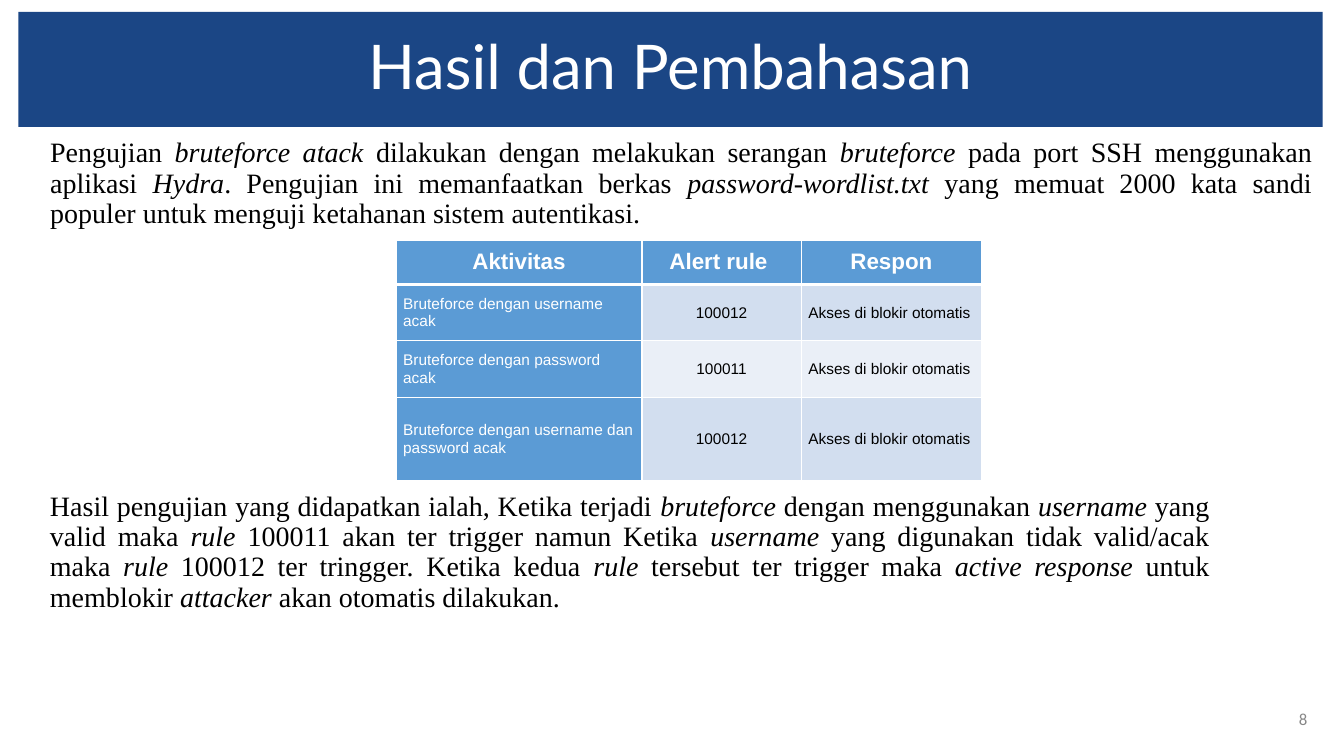
import pptx
import pptx.dml.color
import pptx.enum.text
import pptx.oxml.ns
import pptx.util
from lxml import etree

Cm = pptx.util.Cm
Pt = pptx.util.Pt
RGBColor = pptx.dml.color.RGBColor
ALIGN = pptx.enum.text.PP_ALIGN
MIDDLE = pptx.enum.text.MSO_ANCHOR.MIDDLE
SIZING = pptx.enum.text.MSO_AUTO_SIZE

NAVY = RGBColor(0x1B, 0x46, 0x85)
BLUE = RGBColor(0x5B, 0x9B, 0xD5)
PALE = RGBColor(0xD2, 0xDE, 0xEF)
LIGHT = RGBColor(0xEA, 0xEF, 0xF7)
WHITE = RGBColor(0xFF, 0xFF, 0xFF)
BLACK = RGBColor(0, 0, 0)
GREY = RGBColor(0x88, 0x88, 0x88)

INTRO = (
    "Pengujian *bruteforce atack *dilakukan dengan melakukan serangan "
    "*bruteforce* pada port SSH menggunakan aplikasi *Hydra*. Pengujian ini "
    "memanfaatkan berkas *password-wordlist.txt *yang memuat 2000 kata sandi "
    "populer untuk menguji ketahanan sistem autentikasi."
)
RESULT = (
    "Hasil pengujian yang didapatkan ialah, Ketika terjadi *bruteforce *dengan "
    "menggunakan *username* yang valid maka *rule* 100011 akan ter trigger namun "
    "Ketika *username* yang digunakan tidak valid/acak maka *rule* 100012 ter "
    "tringger. Ketika kedua *rule *tersebut ter trigger maka *active response "
    "*untuk memblokir *attacker *akan otomatis dilakukan."
)
ROWS = [
    ("Aktivitas", "Alert rule ", "Respon"),
    ("Bruteforce dengan username acak", "100012", "Akses di blokir otomatis"),
    ("Bruteforce dengan password acak", "100011", "Akses di blokir otomatis"),
    ("Bruteforce dengan username dan password acak", "100012",
     "Akses di blokir otomatis"),
]
WIDTHS = (6.2, 4.01, 4.55)
HEIGHTS = (1.12, 1.42, 1.42, 2.11)


def place(shape, left, top, width, height):
    """Move and size a shape, in centimetres."""
    shape.left, shape.top = Cm(left), Cm(top)
    shape.width, shape.height = Cm(width), Cm(height)


def style(run, face, size, color, bold=False, slant=False):
    """Format one run."""
    font = run.font
    font.name, font.size = face, Pt(size)
    font.color.rgb = color
    font.bold, font.italic = bold, slant


def write(frame, text, face, size, color, align, bold=False, space=None):
    """Fill a text frame with one uniform paragraph."""
    frame.text = text
    frame.vertical_anchor = MIDDLE
    para = frame.paragraphs[0]
    para.alignment = align
    para.line_spacing = space
    style(para.runs[0], face, size, color, bold)


def add_title(slide, text):
    """Turn the title placeholder into the banner."""
    title = slide.shapes.title
    place(title, 0.46, 0.3, 32.87, 2.9)
    title.fill.solid()
    title.fill.fore_color.rgb = NAVY
    frame = title.text_frame
    frame.word_wrap = True
    frame.auto_size = SIZING.NONE
    write(frame, text, "Lato", 44, WHITE, ALIGN.CENTER, space=0.9)


def fill_prose(shape, text):
    """Write a justified paragraph, with italics between asterisks."""
    frame = shape.text_frame
    frame.word_wrap = True
    frame.auto_size = SIZING.SHAPE_TO_FIT_TEXT
    frame.vertical_anchor = MIDDLE
    para = frame.paragraphs[0]
    props = para._p.get_or_add_pPr()
    props.set("marL", str(Cm(0.15)))
    props.set("indent", "0")
    etree.SubElement(props, pptx.oxml.ns.qn("a:buNone"))
    para.alignment = ALIGN.JUSTIFY
    para.line_spacing = 0.9
    para.space_before = Pt(0)
    for index, part in enumerate(text.split("*")):
        run = para.add_run()
        run.text = part
        style(run, "Times New Roman", 20, BLACK, slant=index % 2 == 1)


def edge(cell, side, width):
    """Draw one white cell border."""
    props = cell._tc.get_or_add_tcPr()
    line = etree.SubElement(props, pptx.oxml.ns.qn("a:ln" + side))
    line.set("w", str(Pt(width)))
    fill = etree.SubElement(line, pptx.oxml.ns.qn("a:solidFill"))
    color = etree.SubElement(fill, pptx.oxml.ns.qn("a:srgbClr"))
    color.set("val", str(WHITE))


def fill_cell(cell, text, row, col):
    """Write and format one table cell."""
    head = row == 0
    blue = head or col == 0
    cell.margin_left = cell.margin_right = Cm(0.18)
    cell.margin_top = cell.margin_bottom = Cm(0)
    for side in "LRTB":
        thick = (row, side) in ((0, "B"), (1, "T"))
        edge(cell, side, 3 if thick else 1)
    cell.fill.solid()
    cell.fill.fore_color.rgb = BLUE if blue else PALE if row % 2 else LIGHT
    cell.vertical_anchor = MIDDLE
    write(cell.text_frame, text, "Arial", 16 if head else 11,
          WHITE if blue else BLACK,
          ALIGN.CENTER if head or col == 1 else ALIGN.LEFT,
          head, 0.97 if head else None)


def add_grid(slide):
    """Add the table of test results."""
    grid = slide.shapes.add_table(
        len(ROWS), len(WIDTHS), Cm(9.98), Cm(6.05),
        Cm(sum(WIDTHS)), Cm(sum(HEIGHTS))).table
    for col, width in zip(grid.columns, WIDTHS):
        col.width = Cm(width)
    for row, height in zip(grid.rows, HEIGHTS):
        row.height = Cm(height)
    for row, texts in enumerate(ROWS):
        for col, text in enumerate(texts):
            fill_cell(grid.cell(row, col), text, row, col)


def add_box(slide, *spot):
    """Add an empty text box, in centimetres."""
    return slide.shapes.add_textbox(*(Cm(value) for value in spot))


def main():
    """Build and save the slide."""
    deck = pptx.Presentation()
    deck.slide_width, deck.slide_height = Cm(33.87), Cm(19.05)
    slide = deck.slides.add_slide(deck.slide_layouts[1])
    add_title(slide, "Hasil dan Pembahasan")
    body = slide.placeholders[1]
    place(body, 0.86, 3.18, 32.46, 2.92)
    fill_prose(body, INTRO)
    add_grid(slide)
    fill_prose(add_box(slide, 0.86, 12.09, 29.87, 3.68), RESULT)
    number = add_box(slide, 31.75, 17.6, 1.45, 1.02)
    number.text_frame.word_wrap = True
    write(number.text_frame, "8", "Calibri", 12, GREY, ALIGN.RIGHT)
    deck.save("out.pptx")


if __name__ == "__main__":
    main()
